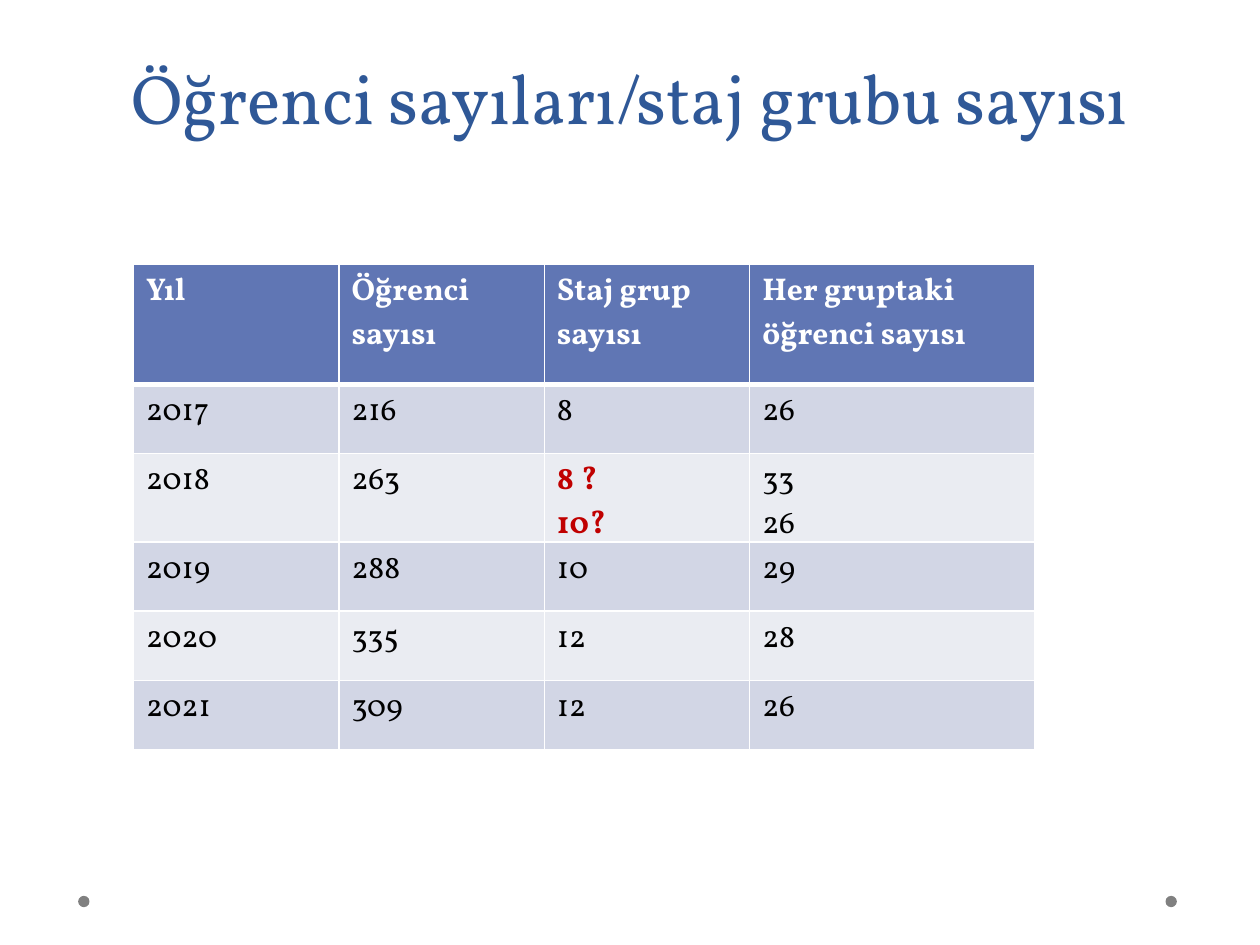
"""Build a slide with a table of student numbers and internship groups by year."""
from dataclasses import dataclass

from lxml import etree
from pptx import Presentation
from pptx import util as u
from pptx.dml.color import RGBColor
from pptx.enum import shapes, text
from pptx.oxml.ns import qn

TITLE = "Öğrenci sayıları/staj grubu sayısı"
HEADER = ("Yıl", "Öğrenci sayısı", "Staj grup sayısı", "Her gruptaki öğrenci sayısı")
ROWS = [
    ("2017", "216", "8", "26"),
    ("2018", "263", "8 ?\n10?", "33\n26"),
    ("2019", "288", "10", "29"),
    ("2020", "335", "12", "28"),
    ("2021", "309", "12", "26"),
]
WIDTH, HEIGHT = 10, 7.5
COLUMNS = (1.63, 1.63, 1.63, 2.26)
HEADER_HEIGHT, ROW_HEIGHT = 0.95, 0.55
TABLE_LEFT, TABLE_TOP = 1.06, 2.1
DOT_SIZE, DOT_TOP, DOT_LEFTS = 0.09, 7.11, (0.62, 9.25)


@dataclass(frozen=True)
class Theme:
    font: str = "Vollkorn"
    title_size: int = 40
    title_leading: int = 58
    table_size: int = 18
    title: str = "2F5897"
    header: str = "6076B4"
    bands: tuple = ("D2D6E5", "EAECF2")
    white: str = "FFFFFF"
    body: str = "000000"
    query: str = "C00000"
    dot: str = "808080"


THEME = Theme()


def rgb(value):
    return RGBColor.from_string(value)


def style(p, size, color, bold=False):
    for r in p.runs:
        r.font.name = THEME.font
        r.font.size = u.Pt(size)
        r.font.bold = bold
        r.font.color.rgb = rgb(color)


def add_dot(s, left):
    size = u.Inches(DOT_SIZE)
    sp = s.shapes.add_shape(
        shapes.MSO_SHAPE.OVAL, u.Inches(left), u.Inches(DOT_TOP), size, size)
    sp.shadow.inherit = False
    sp.fill.solid()
    sp.fill.fore_color.rgb = rgb(THEME.dot)
    sp.line.fill.background()


def add_title(s):
    sp = s.shapes.add_textbox(
        u.Inches(WIDTH * 0.05), 0, u.Inches(WIDTH * 0.9), u.Inches(1.15))
    tf = sp.text_frame
    tf.word_wrap = True
    tf.vertical_anchor = text.MSO_ANCHOR.BOTTOM
    tf.text = TITLE
    p = tf.paragraphs[0]
    p.alignment = text.PP_ALIGN.CENTER
    p.line_spacing = u.Pt(THEME.title_leading)
    style(p, THEME.title_size, THEME.title)


def set_borders(cell, row):
    widths = {"L": 1, "R": 1, "T": 3 if row == 1 else 1, "B": 3 if row == 0 else 1}
    for side, width in widths.items():
        ln = etree.SubElement(
            cell._tc.get_or_add_tcPr(), qn(f"a:ln{side}"), w=str(u.Pt(width)))
        fill = etree.SubElement(ln, qn("a:solidFill"))
        etree.SubElement(fill, qn("a:srgbClr"), val=THEME.white)


def fill_cell(cell, value, row):
    query = "?" in value
    if row == 0:
        fill, color = THEME.header, THEME.white
    else:
        fill = THEME.bands[(row - 1) % 2]
        color = THEME.query if query else THEME.body
    set_borders(cell, row)
    cell.fill.solid()
    cell.fill.fore_color.rgb = rgb(fill)
    cell.text_frame.text = value
    for p in cell.text_frame.paragraphs:
        style(p, THEME.table_size, color, bold=row == 0 or query)


def add_table(s):
    data = [HEADER, *ROWS]
    heights = [HEADER_HEIGHT] + [ROW_HEIGHT] * len(ROWS)
    table = s.shapes.add_table(
        len(data), len(COLUMNS), u.Inches(TABLE_LEFT), u.Inches(TABLE_TOP),
        u.Inches(sum(COLUMNS)), u.Inches(sum(heights))).table
    for column, width in zip(table.columns, COLUMNS):
        column.width = u.Inches(width)
    for i, (values, height) in enumerate(zip(data, heights)):
        table.rows[i].height = u.Inches(height)
        for j, value in enumerate(values):
            fill_cell(table.cell(i, j), value, i)


def main():
    prs = Presentation()
    prs.slide_width, prs.slide_height = u.Inches(WIDTH), u.Inches(HEIGHT)
    s = prs.slides.add_slide(prs.slide_layouts[6])
    for left in DOT_LEFTS:
        add_dot(s, left)
    add_title(s)
    add_table(s)
    prs.save("out.pptx")


if __name__ == "__main__":
    main()
